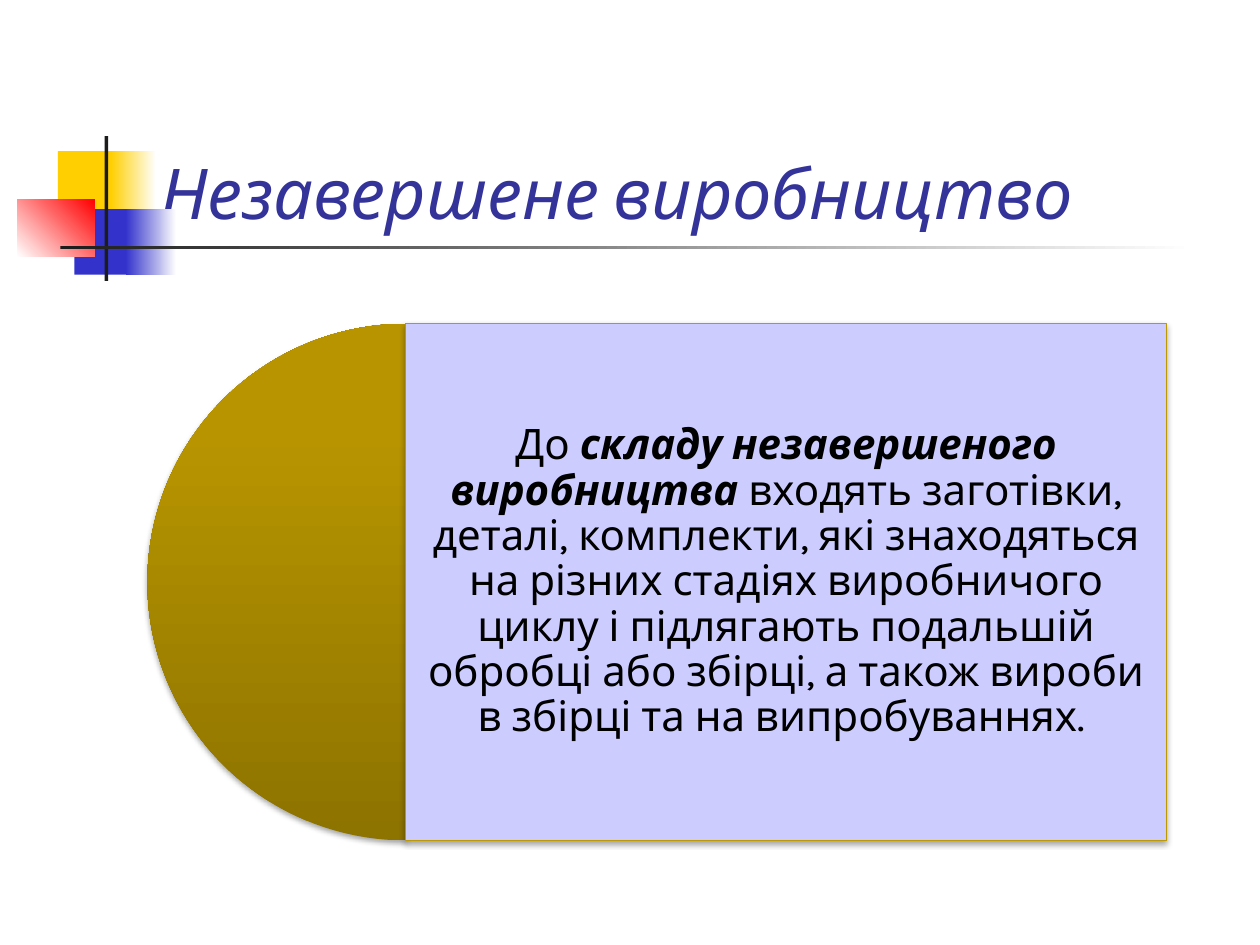
from dataclasses import dataclass

from lxml import etree
from pptx import Presentation
from pptx.dml.color import RGBColor
from pptx.enum.shapes import MSO_SHAPE
from pptx.enum.text import MSO_ANCHOR, PP_ALIGN
from pptx.oxml.ns import qn
from pptx.util import Inches, Pt

RECTANGLE, PIE = MSO_SHAPE.RECTANGLE, MSO_SHAPE.PIE
BOTTOM, MIDDLE = MSO_ANCHOR.BOTTOM, MSO_ANCHOR.MIDDLE
LEFT, CENTER = PP_ALIGN.LEFT, PP_ALIGN.CENTER
TITLE_ONLY = 5


@dataclass(frozen=True)
class Theme:
    font: str = "Karla"
    title_size: int = 40
    body_size: int = 24
    title: str = "333399"
    text: str = "000000"
    white: str = "FFFFFF"
    yellow: str = "FFCF01"
    blue: str = "3333CC"
    red: str = "FF0000"
    dark: str = "1C1C1C"
    panel: str = "CCCCFF"
    border: str = "BD9901"
    gold: tuple = ((0, "8D7300"), (80, "B89500"), (100, "B89600"))


THEME = Theme()

TITLE = "Незавершене виробництво"
# text, emphasised
BODY = [
    ("До ", False),
    ("складу незавершеного виробництва", True),
    (" входять заготівки, деталі, комплекти, які знаходяться на різних стадіях "
     "виробничого циклу і підлягають подальшій обробці або збірці, а також "
     "вироби в збірці та на випробуваннях. ", False),
]


def fade(start, end):
    return (0, start), (100, end)


# box in inches, colour or gradient stops, clockwise angle
ORNAMENT = [
    ((0.46, 1.2, 0.48, 0.52), THEME.yellow, 0),
    ((0.88, 1.2, 0.36, 0.52), fade(THEME.yellow, THEME.white), 0),
    ((0.59, 1.66, 0.46, 0.52), THEME.blue, 0),
    ((1, 1.66, 0.4, 0.52), fade(THEME.blue, THEME.white), 0),
    ((0.14, 1.58, 0.61, 0.46), fade(THEME.white, THEME.red), 315),
    ((0.83, 1.08, 0.03, 1.15), THEME.dark, 0),
    ((0.48, 1.95, 9, 0.03), fade(THEME.dark, THEME.white), 0),
]
TITLE_BOX = (1.17, 0.7, 8.25, 1.2)
PIE_LEFT, PIE_TOP, DIAMETER = 1.17, 2.57, 4.1
PANEL_WIDTH = 6.04


def rgb(color):
    return RGBColor.from_string(color)


def paint(shape, color, angle):
    """Fill with one colour, or with a gradient of (percent, colour) stops."""
    if isinstance(color, str):
        shape.fill.solid()
        shape.fill.fore_color.rgb = rgb(color)
        return
    shape.fill.gradient()
    shape.fill.gradient_angle = (360 - angle) % 360
    stops = shape._element.spPr.find(".//" + qn("a:gsLst"))
    for old_stop in list(stops):
        stops.remove(old_stop)
    for percent, value in color:
        stop = etree.SubElement(stops, qn("a:gs"), pos=str(percent * 1000))
        etree.SubElement(stop, qn("a:srgbClr"), val=value)


def add_shape(slide, kind, box, color, angle=0):
    shape = slide.shapes.add_shape(kind, *map(Inches, box))
    paint(shape, color, angle)
    shape.line.fill.background()
    shape.shadow.inherit = False
    return shape


def add_shadow(shape):
    effects = shape._element.spPr.find(qn("a:effectLst"))
    shadow = etree.SubElement(
        effects, qn("a:outerShdw"), blurRad=str(Pt(3.1)), dist=str(Pt(1.8)),
        dir=str(90 * 60000), rotWithShape="0")
    color = etree.SubElement(shadow, qn("a:srgbClr"), val=THEME.text)
    etree.SubElement(color, qn("a:alpha"), val="35000")


def add_run(paragraph, text, size, color, bold=False, italic=False):
    run = paragraph.add_run()
    run.text = text
    font = run.font
    font.name, font.size, font.color.rgb = THEME.font, Pt(size), rgb(color)
    font.bold, font.italic = bold, italic


def add_title(slide):
    title = slide.shapes.title
    title.left, title.top, title.width, title.height = map(Inches, TITLE_BOX)
    title.text_frame.vertical_anchor = BOTTOM
    paragraph = title.text_frame.paragraphs[0]
    paragraph.alignment = LEFT
    add_run(paragraph, TITLE, THEME.title_size, THEME.title, italic=True)


def add_definition(slide):
    """Half circle whose straight side is the left edge of the text panel."""
    half_circle = add_shape(
        slide, PIE, (PIE_LEFT, PIE_TOP, DIAMETER, DIAMETER), THEME.gold, 270)
    # 90 and 270 degrees, in units of 100000/60000 degree
    half_circle.adjustments[0] = 54
    half_circle.adjustments[1] = 162
    add_shadow(half_circle)

    panel_box = (PIE_LEFT + DIAMETER / 2, PIE_TOP, PANEL_WIDTH, DIAMETER)
    panel = add_shape(slide, RECTANGLE, panel_box, THEME.panel)
    panel.line.color.rgb = rgb(THEME.border)
    panel.line.width = Pt(0.75)
    add_shadow(panel)

    frame = panel.text_frame
    frame.word_wrap = True
    frame.vertical_anchor = MIDDLE
    frame.margin_left = frame.margin_right = Inches(0.1)
    frame.margin_top = frame.margin_bottom = Inches(0.1)
    paragraph = frame.paragraphs[0]
    paragraph.alignment = CENTER
    paragraph.line_spacing = 0.9
    for text, emphasised in BODY:
        add_run(paragraph, text, THEME.body_size, THEME.text, emphasised, emphasised)


def main():
    presentation = Presentation()
    presentation.slide_width, presentation.slide_height = Inches(10), Inches(7.5)
    slide = presentation.slides.add_slide(presentation.slide_layouts[TITLE_ONLY])
    for box, color, angle in ORNAMENT:
        add_shape(slide, RECTANGLE, box, color, angle)
    add_title(slide)
    add_definition(slide)
    presentation.save("out.pptx")


if __name__ == "__main__":
    main()
